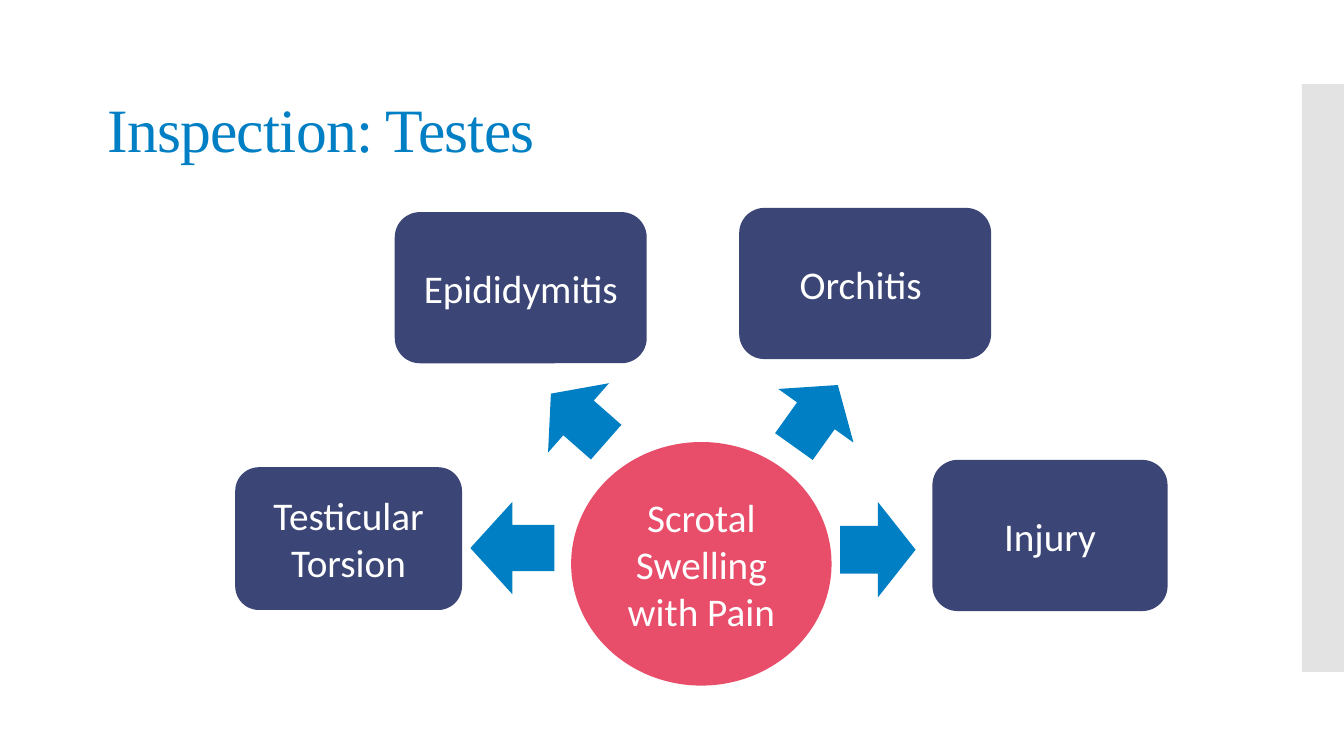
from pptx import Presentation
from pptx.dml.color import RGBColor
from pptx.enum.shapes import MSO_SHAPE
from pptx.enum.text import MSO_ANCHOR, PP_ALIGN
from pptx.oxml.ns import qn
from pptx.util import Pt
from lxml import etree

PX = 9525
BLUE = RGBColor(0x00, 0x7F, 0xC4)
NAVY = RGBColor(0x3C, 0x46, 0x76)
PINK = RGBColor(0xE8, 0x4D, 0x69)
GREY = RGBColor(0xC8, 0xC8, 0xC8)
WHITE = RGBColor(0xFF, 0xFF, 0xFF)

RECTANGLE = MSO_SHAPE.RECTANGLE
ROUNDED = MSO_SHAPE.ROUNDED_RECTANGLE
OVAL = MSO_SHAPE.OVAL
LEFT_ARROW = MSO_SHAPE.LEFT_ARROW
MIDDLE = MSO_ANCHOR.MIDDLE
CENTER = PP_ALIGN.CENTER

# Boxes are left, top, width, height in px, relative to the diagram
CAUSES = [
    ("Testicular Torsion", (0, 247, 216, 136)),
    ("Epididymitis", (152, 4, 240, 144)),
    ("Orchitis ", (480, 0, 240, 144)),
    ("Injury", (664, 240, 224, 144)),
]
ARROWS = [
    ((224, 280, 80, 88), 0),
    ((292, 156, 70, 88), 41.3),
    ((517, 154, 72, 88), 125.5),
    ((576, 280, 72, 91), 180),
]
SYMPTOM_BOX = (320, 223, 248, 232)


def to_emu(box):
    return [length * PX for length in box]


def add_filled(slide, kind, box, color):
    shape = slide.shapes.add_shape(kind, *to_emu(box))
    shape.shadow.inherit = False
    shape.fill.solid()
    shape.fill.fore_color.rgb = color
    shape.line.fill.background()
    return shape


def add_labelled(slide, kind, box, color, label):
    frame = add_filled(slide, kind, box, color).text_frame
    frame.word_wrap = True
    frame.vertical_anchor = MIDDLE
    paragraph = frame.paragraphs[0]
    paragraph.text = label
    paragraph.alignment = CENTER
    paragraph.font.name = "Calibri"
    paragraph.font.size = Pt(28)
    paragraph.font.color.rgb = WHITE


def add_side_bar(slide, box):
    bar = add_filled(slide, RECTANGLE, box, GREY)
    color = bar.fill._xPr.find(".//" + qn("a:srgbClr"))
    etree.SubElement(color, qn("a:alpha"), val="50000")


def add_title(slide, box, title):
    frame = slide.shapes.add_textbox(*to_emu(box)).text_frame
    frame.word_wrap = True
    frame.vertical_anchor = MIDDLE
    paragraph = frame.paragraphs[0]
    run = paragraph.add_run()
    run.text = title
    paragraph.line_spacing = 0.9
    paragraph.font.name = "Times New Roman"
    paragraph.font.size = Pt(44)
    paragraph.font.color.rgb = BLUE
    run._r.get_or_add_rPr().set("spc", "-60")


def add_causes_diagram(slide, left, top):
    """Place the central symptom with arrows out to its possible causes."""
    def place(box):
        x, y, width, height = box
        return left + x, top + y, width, height

    add_labelled(slide, OVAL, place(SYMPTOM_BOX), PINK,
                 "Scrotal Swelling with Pain")
    for (cause, cause_box), (arrow_box, angle) in zip(CAUSES, ARROWS):
        add_labelled(slide, ROUNDED, place(cause_box), NAVY, cause)
        arrow = add_filled(slide, LEFT_ARROW, place(arrow_box), BLUE)
        arrow.rotation = angle


def main():
    presentation = Presentation()
    presentation.slide_width = 1280 * PX
    presentation.slide_height = 720 * PX
    slide = presentation.slides.add_slide(presentation.slide_layouts[6])
    add_side_bar(slide, (1240, 80, 40, 560))
    add_title(slide, (93, 58, 665, 136), "Inspection: Testes")
    add_causes_diagram(slide, 224, 198)
    presentation.save("out.pptx")


if __name__ == "__main__":
    main()
